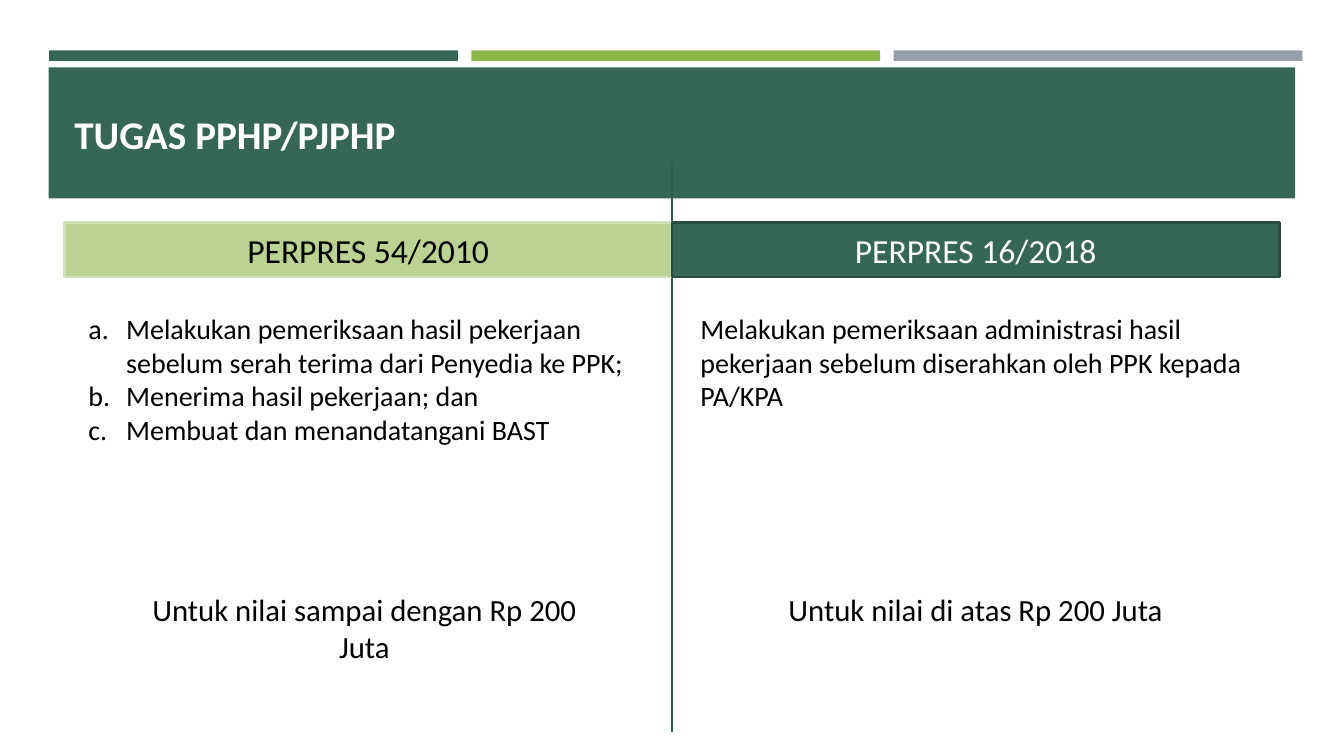
"""Build the slide comparing the PPHP and PJPHP duties in two regulations."""
from dataclasses import dataclass

from lxml.etree import SubElement
from pptx import Presentation
from pptx.dml.color import RGBColor
from pptx.enum.shapes import MSO_CONNECTOR, MSO_SHAPE
from pptx.enum.text import MSO_ANCHOR, PP_ALIGN
from pptx.oxml.ns import qn
from pptx.shapes.base import BaseShape
from pptx.slide import Slide
from pptx.util import Pt

GREEN = "366658"
LIME = "8CB64A"
GREY = "969FA7"
BLACK = "000000"
WHITE = "FFFFFF"
MIDDLE = 480
HEADER_WIDTH = 434


@dataclass(frozen=True)
class Area:
    left: float
    top: float
    width: float
    height: float


@dataclass(frozen=True)
class Style:
    size: float
    color: str = BLACK
    bold: bool = False
    align: PP_ALIGN = PP_ALIGN.LEFT
    anchor: MSO_ANCHOR = MSO_ANCHOR.TOP
    lettered: bool = False


@dataclass(frozen=True)
class Bar:
    area: Area
    fill: str


@dataclass(frozen=True)
class Header:
    text: str
    left: float
    fill: str
    line: str
    color: str


@dataclass(frozen=True)
class Note:
    lines: tuple[str, ...]
    area: Area
    style: Style


TITLE = Style(28, WHITE, bold=True, anchor=MSO_ANCHOR.BOTTOM)
DUTY = Style(20)
DUTY_LIST = Style(20, lettered=True)
LIMIT = Style(22, align=PP_ALIGN.CENTER)

BARS = [
    Bar(Area(35 + 301.7 * index, 36, 292, 7.5), fill)
    for index, fill in enumerate((GREEN, LIME, GREY))
] + [Bar(Area(34.8, 48.2, 890.4, 93.6), GREEN)]

HEADERS = [
    Header("PERPRES 54/2010", MIDDLE - HEADER_WIDTH, "BAD392", "D1E2B7", BLACK),
    Header("PERPRES 16/2018", MIDDLE, GREEN, "284B41", WHITE),
]

NOTES = [
    Note(("TUGAS PPHP/PJPHP",), Area(46, 55.4, 868, 60.5), TITLE),
    Note(
        (
            "Melakukan pemeriksaan hasil pekerjaan sebelum serah terima dari Penyedia ke PPK;",
            "Menerima hasil pekerjaan; dan",
            "Membuat dan menandatangani BAST",
        ),
        Area(56, 219, 408, 104.4),
        DUTY_LIST,
    ),
    Note(
        (
            "Melakukan pemeriksaan administrasi hasil pekerjaan sebelum "
            "diserahkan oleh PPK kepada PA/KPA",
        ),
        Area(493.2, 219, 408, 80),
        DUTY,
    ),
    Note(("Untuk nilai sampai dengan Rp 200 Juta",), Area(84.5, 418.3, 351.5, 34), LIMIT),
    Note(("Untuk nilai di atas Rp 200 Juta",), Area(554.4, 418.3, 285, 34), LIMIT),
]


def rgb(color: str) -> RGBColor:
    return RGBColor.from_string(color)


def lengths(area: Area) -> tuple[Pt, Pt, Pt, Pt]:
    return Pt(area.left), Pt(area.top), Pt(area.width), Pt(area.height)


def write(box: BaseShape, lines: tuple[str, ...], style: Style) -> None:
    frame = box.text_frame
    frame.word_wrap = True
    frame.vertical_anchor = style.anchor
    for index, line in enumerate(lines):
        para = frame.add_paragraph() if index else frame.paragraphs[0]
        para.alignment = style.align
        if style.lettered:
            properties = para._p.get_or_add_pPr()
            properties.set("marL", str(Pt(27)))
            properties.set("indent", str(Pt(-27)))
            SubElement(properties, qn("a:buFont"), typeface="+mj-lt")
            SubElement(properties, qn("a:buAutoNum"), type="alphaLcPeriod")
        span = para.add_run()
        span.text = line
        span.font.name = "Calibri"
        span.font.size = Pt(style.size)
        span.font.bold = style.bold
        span.font.color.rgb = rgb(style.color)


def add_bar(page: Slide, bar: Bar) -> BaseShape:
    box = page.shapes.add_shape(MSO_SHAPE.RECTANGLE, *lengths(bar.area))
    box.shadow.inherit = False
    box.fill.solid()
    box.fill.fore_color.rgb = rgb(bar.fill)
    box.line.fill.background()
    return box


def add_header(page: Slide, header: Header) -> None:
    box = add_bar(page, Bar(Area(header.left, 159, HEADER_WIDTH, 39), header.fill))
    box.line.color.rgb = rgb(header.line)
    box.line.width = Pt(1.75)
    style = Style(24, header.color, align=PP_ALIGN.CENTER, anchor=MSO_ANCHOR.MIDDLE)
    write(box, (header.text,), style)


def add_note(page: Slide, note: Note) -> None:
    write(page.shapes.add_textbox(*lengths(note.area)), note.lines, note.style)


def add_divider(page: Slide) -> None:
    divider = page.shapes.add_connector(
        MSO_CONNECTOR.STRAIGHT, Pt(MIDDLE), Pt(116), Pt(MIDDLE), Pt(522.7)
    )
    divider.line.color.rgb = rgb("315C4F")
    divider.line.width = Pt(1)
    SubElement(divider._element.spPr, qn("a:effectLst"))


def main() -> None:
    deck = Presentation()
    deck.slide_width = Pt(960)
    deck.slide_height = Pt(540)
    page = deck.slides.add_slide(deck.slide_layouts[6])
    for bar in BARS:
        add_bar(page, bar)
    add_divider(page)
    for header in HEADERS:
        add_header(page, header)
    for note in NOTES:
        add_note(page, note)
    deck.save("out.pptx")


if __name__ == "__main__":
    main()
